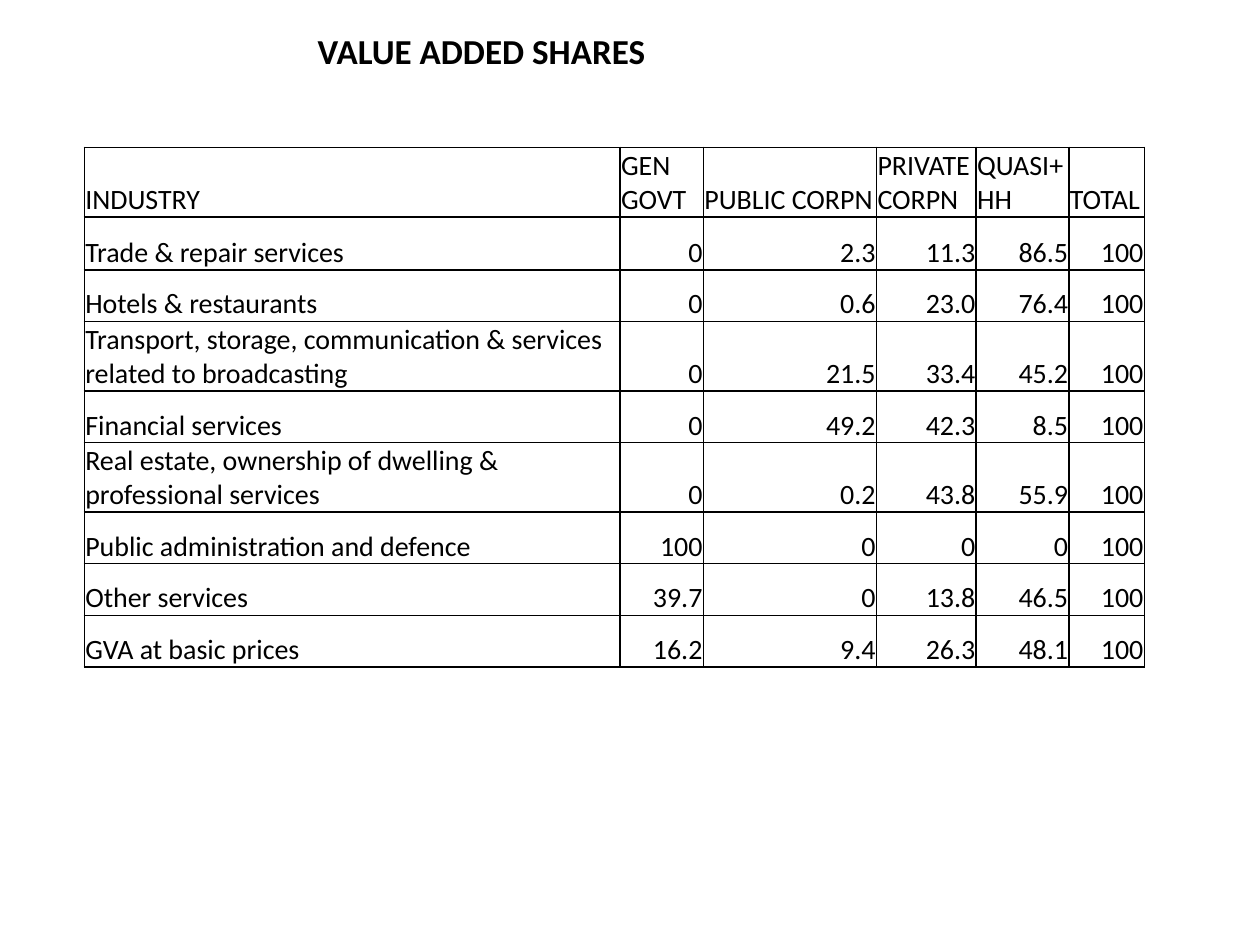
from dataclasses import dataclass

from lxml.etree import SubElement
from pptx import Presentation
from pptx.dml.color import RGBColor
from pptx.enum.text import MSO_ANCHOR, PP_ALIGN
from pptx.oxml.ns import qn
from pptx.slide import Slide
from pptx.table import _Cell
from pptx.text.text import TextFrame
from pptx.util import Cm, Pt


@dataclass(frozen=True)
class Theme:
    font: str = "Calibri"
    ink: str = "000000"
    title_size: int = 20
    table_size: int = 16
    border_width: int = 1


@dataclass(frozen=True)
class Column:
    heading: str
    width: float
    align: PP_ALIGN = PP_ALIGN.RIGHT


@dataclass(frozen=True)
class Industry:
    name: str
    shares: tuple[str, ...]
    height: float = 1.04

    @property
    def entries(self) -> tuple[str, ...]:
        return (self.name, *self.shares, "100")


THEME = Theme()
HEADER_HEIGHT = 1.04

COLUMNS = (
    Column("INDUSTRY", 10.8, PP_ALIGN.LEFT),
    Column("GEN\nGOVT", 1.68),
    Column("PUBLIC CORPN", 3.49),
    Column("PRIVATE CORPN", 2.01),
    Column("QUASI+HH", 1.87),
    Column("TOTAL", 1.52),
)

INDUSTRIES = (
    Industry("Trade & repair services", ("0", "2.3", "11.3", "86.5"), 1.07),
    Industry("Hotels & restaurants", ("0", "0.6", "23.0", "76.4")),
    Industry("Transport, storage, communication & services related to broadcasting",
             ("0", "21.5", "33.4", "45.2")),
    Industry("Financial services", ("0", "49.2", "42.3", "8.5")),
    Industry("Real estate, ownership of dwelling & professional services",
             ("0", "0.2", "43.8", "55.9")),
    Industry("Public administration and defence", ("100", "0", "0", "0")),
    Industry("Other services", ("39.7", "0", "13.8", "46.5")),
    Industry("GVA at basic prices", ("16.2", "9.4", "26.3", "48.1")),
)


def write_text(frame: TextFrame, text: str, size: int, align: PP_ALIGN, bold: bool = False) -> None:
    frame.text = text
    for paragraph in frame.paragraphs:
        paragraph.alignment = align
        paragraph.font.name = THEME.font
        paragraph.font.size = Pt(size)
        paragraph.font.bold = bold
        paragraph.font.color.rgb = RGBColor.from_string(THEME.ink)


def draw_borders(cell: _Cell) -> None:
    properties = cell._tc.get_or_add_tcPr()
    for side in ("a:lnL", "a:lnR", "a:lnT", "a:lnB"):
        border = SubElement(properties, qn(side), w=str(Pt(THEME.border_width)))
        fill = SubElement(border, qn("a:solidFill"))
        SubElement(fill, qn("a:srgbClr"), val=THEME.ink)


def fill_cell(cell: _Cell, text: str, align: PP_ALIGN) -> None:
    write_text(cell.text_frame, text, THEME.table_size, align)
    cell.vertical_anchor = MSO_ANCHOR.BOTTOM
    cell.margin_left = cell.margin_right = cell.margin_top = Cm(0.02)
    cell.margin_bottom = 0
    draw_borders(cell)
    cell.fill.background()


def add_title(slide: Slide) -> None:
    title = slide.shapes.title
    title.left, title.top, title.width, title.height = Cm(6.15), Cm(0), Cm(15.24), Cm(1.57)
    write_text(title.text_frame, "VALUE ADDED SHARES", THEME.title_size, PP_ALIGN.LEFT, bold=True)
    title.text_frame.vertical_anchor = MSO_ANCHOR.BOTTOM


def add_shares_table(slide: Slide) -> None:
    heights = [HEADER_HEIGHT, *(industry.height for industry in INDUSTRIES)]
    shares = slide.shapes.add_table(
        len(heights), len(COLUMNS), Cm(1.7), Cm(2.97),
        Cm(sum(column.width for column in COLUMNS)), Cm(sum(heights)),
    ).table
    shares.first_row = shares.horz_banding = False
    for row, height in zip(shares.rows, heights):
        row.height = Cm(height)
    for index, column in enumerate(COLUMNS):
        shares.columns[index].width = Cm(column.width)
        fill_cell(shares.cell(0, index), column.heading, PP_ALIGN.LEFT)
        for line, industry in enumerate(INDUSTRIES, start=1):
            fill_cell(shares.cell(line, index), industry.entries[index], column.align)


def main() -> None:
    deck = Presentation()
    deck.slide_width, deck.slide_height = Cm(25.4), Cm(19.05)
    slide = deck.slides.add_slide(deck.slide_layouts.get_by_name("Title Only"))
    add_title(slide)
    add_shares_table(slide)
    deck.save("out.pptx")


if __name__ == "__main__":
    main()
